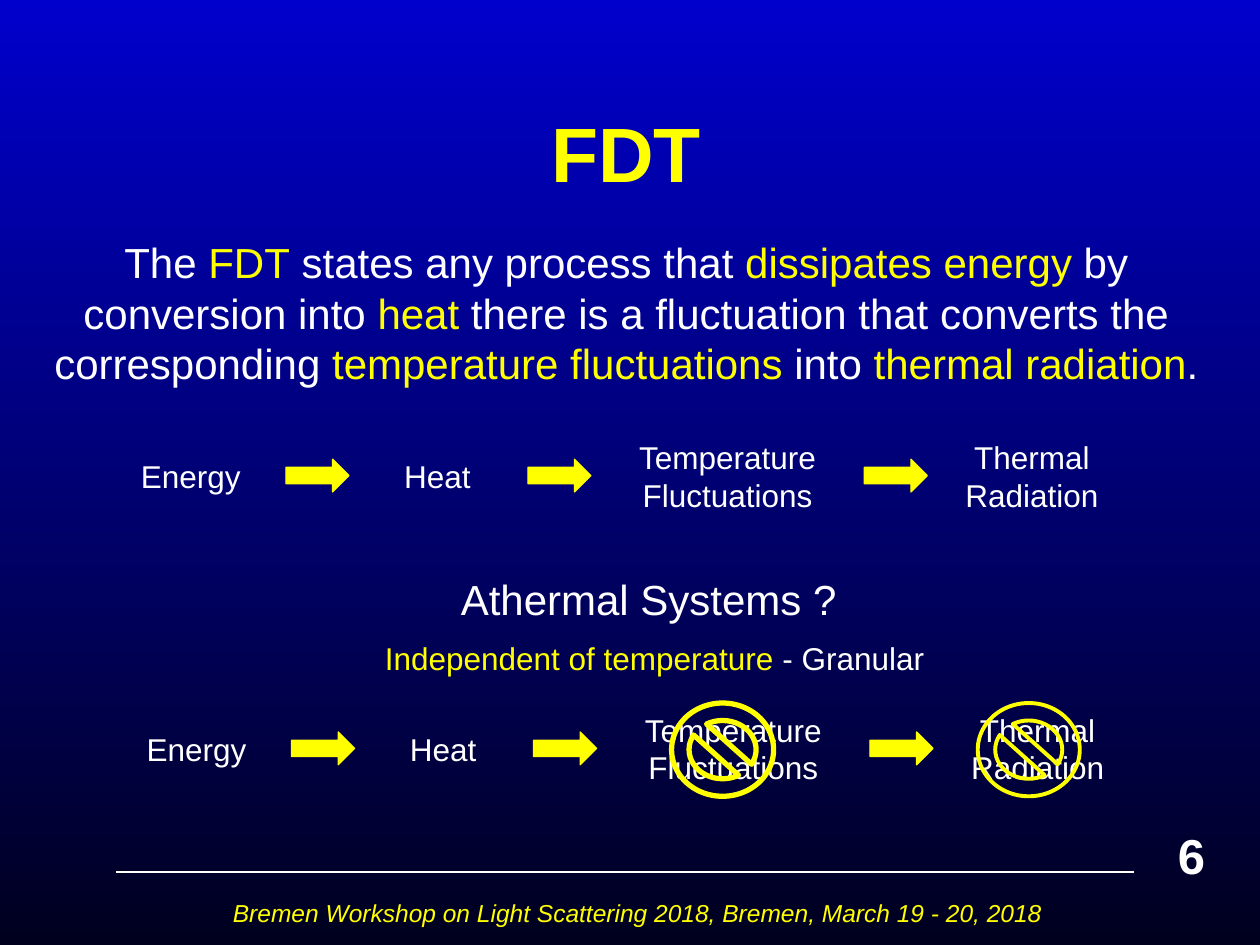
from dataclasses import dataclass

from lxml import etree
from pptx import Presentation, util as u
from pptx.dml.color import RGBColor
from pptx.enum import shapes, text
from pptx.oxml.ns import qn


@dataclass(frozen=True)
class Theme:
    font: str = "Arial"
    plain: RGBColor = RGBColor(0xFF, 0xFF, 0xFF)
    accent: RGBColor = RGBColor(0xFF, 0xFF, 0x00)
    sky: RGBColor = RGBColor(0x00, 0x00, 0xCC)
    night: RGBColor = RGBColor(0x00, 0x00, 0x1E)
    title: int = 44
    number: int = 28
    body: int = 24
    label: int = 18
    footer: int = 14


theme = Theme()
deck = Presentation()
deck.slide_width, deck.slide_height = u.Inches(10), u.Inches(7.5)
COLUMN, ROW = deck.slide_width / 100, deck.slide_height / 75


def area(left, top, width, height):
    """Turn grid columns and rows into slide lengths."""
    return [round(n * unit) for n, unit in zip((left, top, width, height), (COLUMN, ROW) * 2)]


def write(frame, words, size, color=theme.plain, align=text.PP_ALIGN.LEFT,
          anchor=text.MSO_ANCHOR.TOP, bold=False, italic=False):
    """Fill a frame, one paragraph per line; words between asterisks are accented."""
    frame.word_wrap = True
    frame.vertical_anchor = anchor
    for index, line in enumerate(words.split("\n")):
        paragraph = frame.add_paragraph() if index else frame.paragraphs[0]
        paragraph.alignment = align
        for part, piece in enumerate(line.split("*")):
            if piece:
                run = paragraph.add_run()
                run.text = piece
                run.font.name, run.font.size = theme.font, u.Pt(size)
                run.font.bold, run.font.italic = bold, italic
                run.font.color.rgb = theme.accent if part % 2 else color


CENTER, MIDDLE = text.PP_ALIGN.CENTER, text.MSO_ANCHOR.MIDDLE
slide = deck.slides.add_slide(deck.slide_layouts[5])

# Background and heading
backdrop = slide.background.fill
backdrop.gradient()
backdrop.gradient_angle = 270
for stop, color in zip(backdrop.gradient_stops, (theme.sky, theme.night)):
    stop.color.rgb = color

title = slide.shapes.title
title.left, title.top, title.width, title.height = area(7.2, 5.8, 85, 12.5)
write(title.text_frame, "FDT", theme.title, color=theme.accent,
      align=CENTER, anchor=MIDDLE, bold=True)

# Footer
left, top, width, _ = area(9.2, 69.2, 80.8, 0)
rule = slide.shapes.add_connector(shapes.MSO_CONNECTOR.STRAIGHT, left, top, left + width, top)
rule.line.color.rgb, rule.line.width = theme.plain, u.Pt(0.75)
etree.SubElement(rule._element.spPr, qn("a:effectLst"))

event = slide.shapes.add_textbox(*area(17.5, 70.8, 82.5, 4.2))
write(event.text_frame, "Bremen Workshop on Light Scattering 2018, Bremen, March 19 - 20, 2018",
      theme.footer, color=theme.accent, italic=True)
number = slide.shapes.add_textbox(*area(92.5, 65, 7.5, 5.7))
write(number.text_frame, "6", theme.number, bold=True, anchor=MIDDLE)

# Statement and question
statement = slide.shapes.add_textbox(*area(2.6, 18.3, 94.2, 21.2))
write(statement.text_frame,
      "The *FDT* states any process that *dissipates energy *by conversion into *heat* there is "
      "a fluctuation that converts the corresponding *temperature fluctuations *into "
      "*thermal radiation*.", theme.body, align=CENTER)

question = slide.shapes.add_textbox(*area(25.8, 45, 52.3, 9.4))
write(question.text_frame, "Athermal Systems ? \n*Independent of temperature *- Granular",
      theme.body, align=CENTER)
answer = question.text_frame.paragraphs[1]
answer.space_before = u.Pt(9)
for run in answer.runs:
    run.font.size = u.Pt(theme.label)

# Energy chains: the thermal one, then the athermal one
STEPS = [("Energy", 10.2, 11.7), ("Heat", 31.1, 9.2),
         ("Temperature\nFluctuations", 48.6, 18.3), ("Thermal\nRadiation", 74.4, 15)]
ARROWS = (22.7, 41.9, 68.6)
LABEL_HEIGHT, ARROW_HEIGHT = 7.1, 2.6
for shift, middle in ((0, 37.75), (0.45, 59.4)):
    chain = slide.shapes.add_group_shape().shapes
    for words, left, width in STEPS:
        step = chain.add_textbox(*area(left + shift, middle - LABEL_HEIGHT / 2,
                                       width, LABEL_HEIGHT))
        write(step.text_frame, words, theme.label, anchor=MIDDLE,
              align=CENTER if "\n" in words else text.PP_ALIGN.LEFT)
    for left in ARROWS:
        arrow = chain.add_shape(shapes.MSO_SHAPE.RIGHT_ARROW,
                                *area(left + shift, middle - ARROW_HEIGHT / 2, 5, ARROW_HEIGHT))
        arrow.shadow.inherit = False
        arrow.fill.solid()
        arrow.fill.fore_color.rgb = arrow.line.color.rgb = theme.accent
        arrow.line.width = u.Pt(0.75)

# Steps that athermal systems rule out
bans = slide.shapes.add_group_shape().shapes
for left, weight in ((53.3, 3), (77.6, 2.25)):
    ban = bans.add_shape(shapes.MSO_SHAPE.NO_SYMBOL, *area(left, 55.8, 8.1, 7.4))
    ban.shadow.inherit = False
    ban.fill.background()
    ban.line.color.rgb, ban.line.width = theme.accent, u.Pt(weight)

deck.save("out.pptx")
